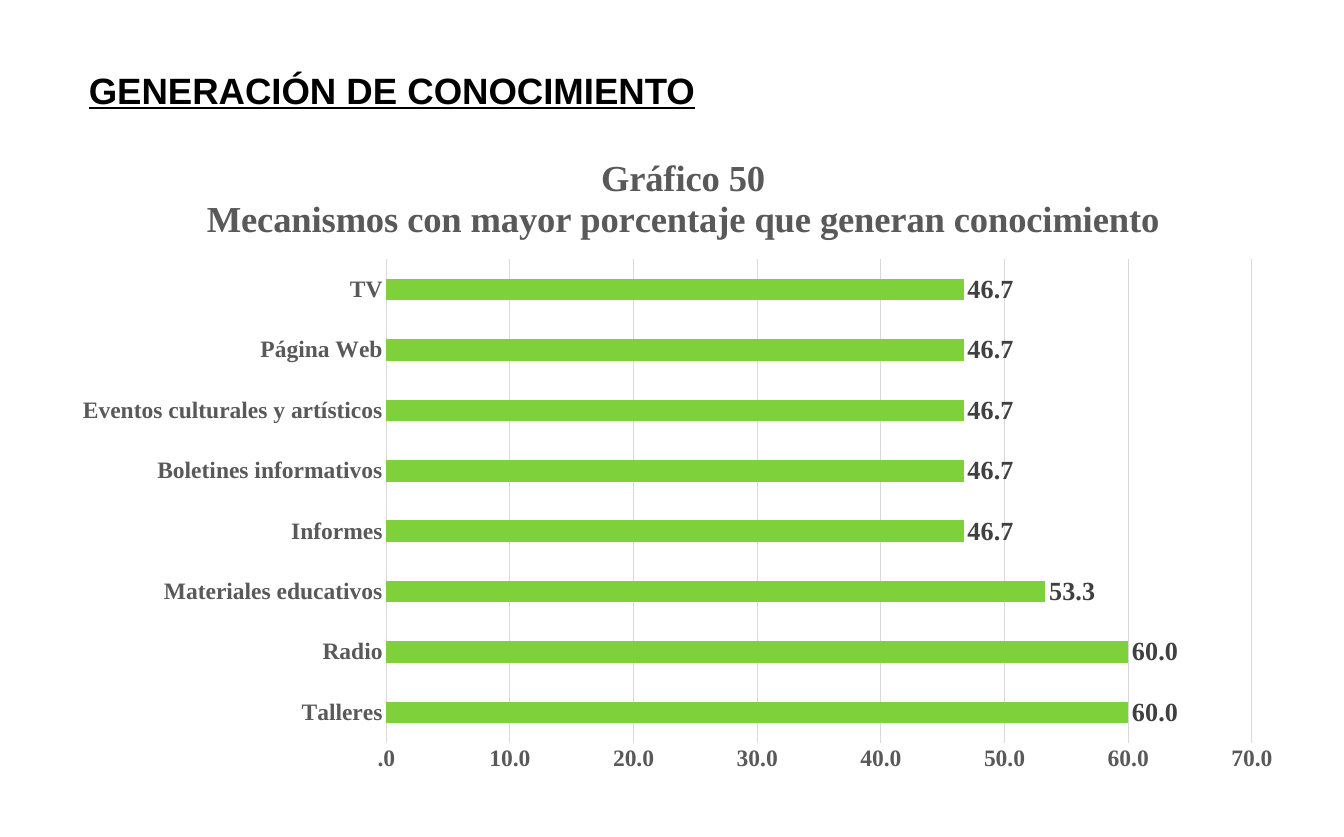
from dataclasses import dataclass

from lxml import etree
from pptx import Presentation
from pptx.chart.data import CategoryChartData
from pptx.dml.color import RGBColor
from pptx.enum.chart import XL_CHART_TYPE, XL_LABEL_POSITION, XL_TICK_MARK
from pptx.enum.text import MSO_AUTO_SIZE
from pptx.oxml.ns import qn
from pptx.util import Cm, Pt

BAR_CLUSTERED = XL_CHART_TYPE.BAR_CLUSTERED
OUTSIDE_END = XL_LABEL_POSITION.OUTSIDE_END
NO_TICK = XL_TICK_MARK.NONE
FIT_SHAPE = MSO_AUTO_SIZE.SHAPE_TO_FIT_TEXT


@dataclass(frozen=True)
class Theme:
    heading_font: str = "Arial"
    chart_font: str = "Times New Roman"
    black: RGBColor = RGBColor(0x00, 0x00, 0x00)
    axis_text: RGBColor = RGBColor(0x59, 0x59, 0x59)
    label_text: RGBColor = RGBColor(0x40, 0x40, 0x40)
    grid: RGBColor = RGBColor(0xD9, 0xD9, 0xD9)
    bar: RGBColor = RGBColor(0x7F, 0xD1, 0x3B)
    base_size: Pt = Pt(10)
    title_size: Pt = Pt(28)
    axis_size: Pt = Pt(18)
    label_size: Pt = Pt(20)
    line_width: Pt = Pt(0.75)


THEME = Theme()
NUMBER_FORMAT = "####.0"
CHART_TITLE = ("Gráfico 50", "Mecanismos con mayor porcentaje que generan conocimiento")
MECHANISMS = {
    "Talleres": 60,
    "Radio": 60,
    "Materiales educativos": 53.3,
    "Informes": 46.7,
    "Boletines informativos": 46.7,
    "Eventos culturales y artísticos": 46.7,
    "Página Web": 46.7,
    "TV": 46.7,
}
PLOT_AREA = {"x": 0.26, "y": 0.19, "w": 0.7, "h": 0.75}


def style_font(font, name, size, color):
    font.name = name
    font.size = size
    font.bold = True
    font.color.rgb = color


def style_line(line):
    line.color.rgb = THEME.grid
    line.width = THEME.line_width


def place_plot_area(chart, fractions):
    """Fix the inner plot area as fractions of the chart's box."""
    plot_area = chart.plots[0]._element.getparent()
    for old_layout in plot_area.findall(qn("c:layout")):
        plot_area.remove(old_layout)
    layout = etree.Element(qn("c:layout"))
    manual = etree.SubElement(layout, qn("c:manualLayout"))
    settings = {"layoutTarget": "inner", "xMode": "edge", "yMode": "edge", **fractions}
    for tag, value in settings.items():
        etree.SubElement(manual, qn(f"c:{tag}")).set("val", str(value))
    plot_area.insert(0, layout)


def add_heading(slide, left, top, width, height):
    frame = slide.shapes.add_textbox(left, top, width, height).text_frame
    frame.word_wrap = True
    frame.auto_size = FIT_SHAPE
    run = frame.paragraphs[0].add_run()
    run.text = "GENERACIÓN DE CONOCIMIENTO"
    style_font(run.font, THEME.heading_font, THEME.title_size, THEME.black)
    run.font.underline = True


def add_chart_title(chart):
    chart.has_title = True
    chart.chart_title.include_in_layout = False
    frame = chart.chart_title.text_frame
    for index, line in enumerate(CHART_TITLE):
        paragraph = frame.add_paragraph() if index else frame.paragraphs[0]
        run = paragraph.add_run()
        run.text = line
        style_font(run.font, THEME.chart_font, THEME.title_size, THEME.axis_text)


def style_axes(chart):
    mechanism_axis, percent_axis = chart.category_axis, chart.value_axis
    for axis in (mechanism_axis, percent_axis):
        axis.major_tick_mark = axis.minor_tick_mark = NO_TICK
        style_font(axis.tick_labels.font, THEME.chart_font, THEME.axis_size, THEME.axis_text)
    style_line(mechanism_axis.format.line)
    percent_axis.format.line.fill.background()
    percent_axis.minimum_scale = 0
    percent_axis.maximum_scale = 70
    percent_axis.major_unit = 10
    percent_axis.has_major_gridlines = True
    style_line(percent_axis.major_gridlines.format.line)
    percent_axis.tick_labels.number_format = NUMBER_FORMAT
    percent_axis.tick_labels.number_format_is_linked = False


def style_bars(plot):
    plot.gap_width = 182
    plot.vary_by_categories = False
    series = plot.series[0]
    series.invert_if_negative = False
    series.format.fill.solid()
    series.format.fill.fore_color.rgb = THEME.bar
    labels = series.data_labels
    labels.show_value = True
    labels.position = OUTSIDE_END
    labels.number_format = NUMBER_FORMAT
    labels.number_format_is_linked = False
    style_font(labels.font, THEME.chart_font, THEME.label_size, THEME.label_text)


def add_mechanisms_chart(slide, left, top, width, height):
    data = CategoryChartData(number_format=NUMBER_FORMAT)
    data.categories = list(MECHANISMS)
    data.add_series("Series 1", list(MECHANISMS.values()))
    chart = slide.shapes.add_chart(BAR_CLUSTERED, left, top, width, height, data).chart
    chart.has_legend = False
    chart.font.name = THEME.chart_font
    chart.font.size = THEME.base_size
    chart.font.color.rgb = THEME.black
    add_chart_title(chart)
    style_axes(chart)
    style_bars(chart.plots[0])
    place_plot_area(chart, PLOT_AREA)


def main():
    deck = Presentation()
    deck.slide_width, deck.slide_height = Cm(36.3), Cm(22.6)
    slide = deck.slides.add_slide(deck.slide_layouts[6])
    add_mechanisms_chart(slide, Cm(1.75), Cm(3.7), Cm(33.4), Cm(17.4))
    add_heading(slide, Cm(2.15), Cm(1.7), Cm(23.4), Cm(1.45))
    deck.save("out.pptx")


if __name__ == "__main__":
    main()
